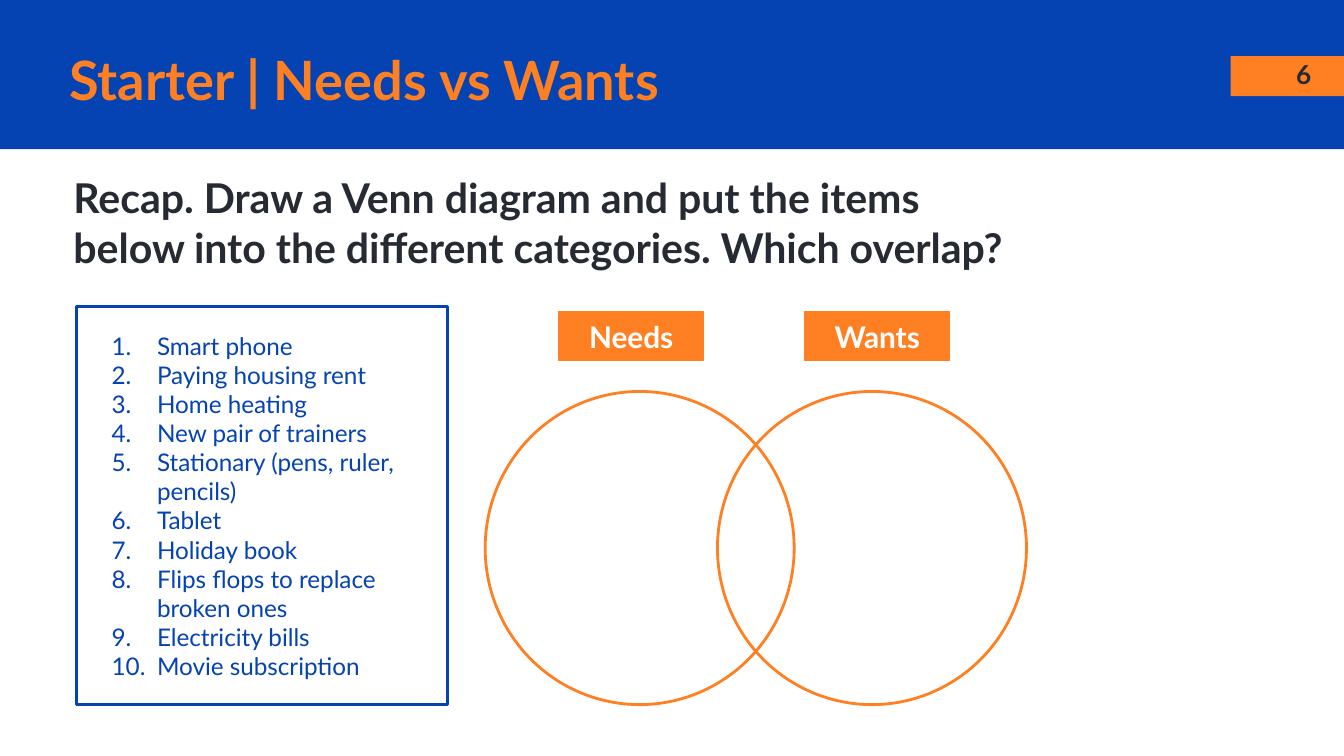
import pptx
import pptx.util
import pptx.dml.color
import pptx.enum.shapes
import pptx.enum.text
import pptx.oxml

Cm, Pt = pptx.util.Cm, pptx.util.Pt
Kind = pptx.enum.shapes.MSO_SHAPE
Align = pptx.enum.text.PP_ALIGN
Anchor = pptx.enum.text.MSO_ANCHOR

# Content
COLORS = {"blue": "0543B3", "orange": "FF8022", "ink": "262A33", "white": "FFFFFF"}
FONT = "Lato"
TITLE = "Starter | Needs vs Wants"
NUMBER = "6"
TASK = ("Recap. Draw a Venn diagram and put the items below into "
        "the different categories. Which overlap?")
SETS = ["Needs", "Wants"]
ITEMS = [
    "Smart phone",
    "Paying housing rent",
    "Home heating",
    "New pair of trainers",
    "Stationary (pens, ruler, pencils)",
    "Tablet",
    "Holiday book",
    "Flips flops to replace broken ones",
    "Electricity bills",
    "Movie subscription",
]

deck = pptx.Presentation()
deck.slide_width, deck.slide_height = Cm(25.4), Cm(14.29)
slide = deck.slides.add_slide(deck.slide_layouts[6])


def color(name):
    return pptx.dml.color.RGBColor.from_string(COLORS[name])


def draw(kind, box, fill=None, line=None, width=1.5):
    shape = slide.shapes.add_shape(kind, *map(Cm, box))
    shape.shadow.inherit = False
    if fill:
        shape.fill.solid()
        shape.fill.fore_color.rgb = color(fill)
    else:
        shape.fill.background()
    if line:
        shape.line.color.rgb = color(line)
        shape.line.width = Pt(width)
    else:
        shape.line.fill.background()
    return shape


def write(shape, lines, size, tint, bold=True, align=Align.LEFT,
          anchor=Anchor.MIDDLE, inset=0.25, count=False):
    frame = shape.text_frame
    frame.word_wrap = True
    frame.vertical_anchor = anchor
    frame.margin_left = frame.margin_right = Cm(inset)
    frame.margin_top = frame.margin_bottom = Cm(inset)
    frame.text = "\n".join(lines)
    for para in frame.paragraphs:
        para.alignment = align
        if count:
            number(para, tint)
        para.font.name = FONT
        para.font.size = Pt(size)
        para.font.bold = bold
        para.font.color.rgb = color(tint)


def number(para, tint):
    props = para._p.get_or_add_pPr()
    props.set("marL", str(Cm(1.27)))
    props.set("indent", str(-Cm(0.86)))
    space = 'xmlns:a="http://schemas.openxmlformats.org/drawingml/2006/main"'
    for part in (
        f'<a:buClr {space}><a:srgbClr val="{COLORS[tint]}"/></a:buClr>',
        f'<a:buFont {space} typeface="{FONT}"/>',
        f'<a:buAutoNum {space} type="arabicPeriod"/>',
    ):
        props.append(pptx.oxml.parse_xml(part))


def label(box, *args, **style):
    write(slide.shapes.add_textbox(*map(Cm, box)), *args, **style)


# Header band, title and page number
draw(Kind.RECTANGLE, (0, 0, 25.4, 2.82), "blue")
draw(Kind.RECTANGLE, (23.26, 1.06, 2.14, 0.76), "orange")
label((23.88, 0.85, 1.52, 1.09), [NUMBER], 14, "ink",
      align=Align.CENTER, anchor=Anchor.TOP)
label((1.06, 0.78, 15.85, 1.42), [TITLE], 29, "orange")

# Task
label((1.39, 3.27, 18.21, 1.9), [TASK], 22, "ink", anchor=Anchor.TOP, inset=0)

# Venn circles with their labels
for i, name in enumerate(SETS):
    draw(Kind.OVAL, (9.17 + 4.39 * i, 7.4, 5.84, 5.92), line="orange")
    tag = draw(Kind.RECTANGLE, (10.56 + 4.65 * i, 5.9, 2.74, 0.91),
               "orange", "orange", 0.75)
    write(tag, [name], 16, "white", align=Align.CENTER)

# Numbered items
panel = draw(Kind.RECTANGLE, (1.45, 5.8, 7.01, 7.52), "white", "blue")
write(panel, ITEMS, 13, "blue", bold=False, count=True)

deck.save("out.pptx")
